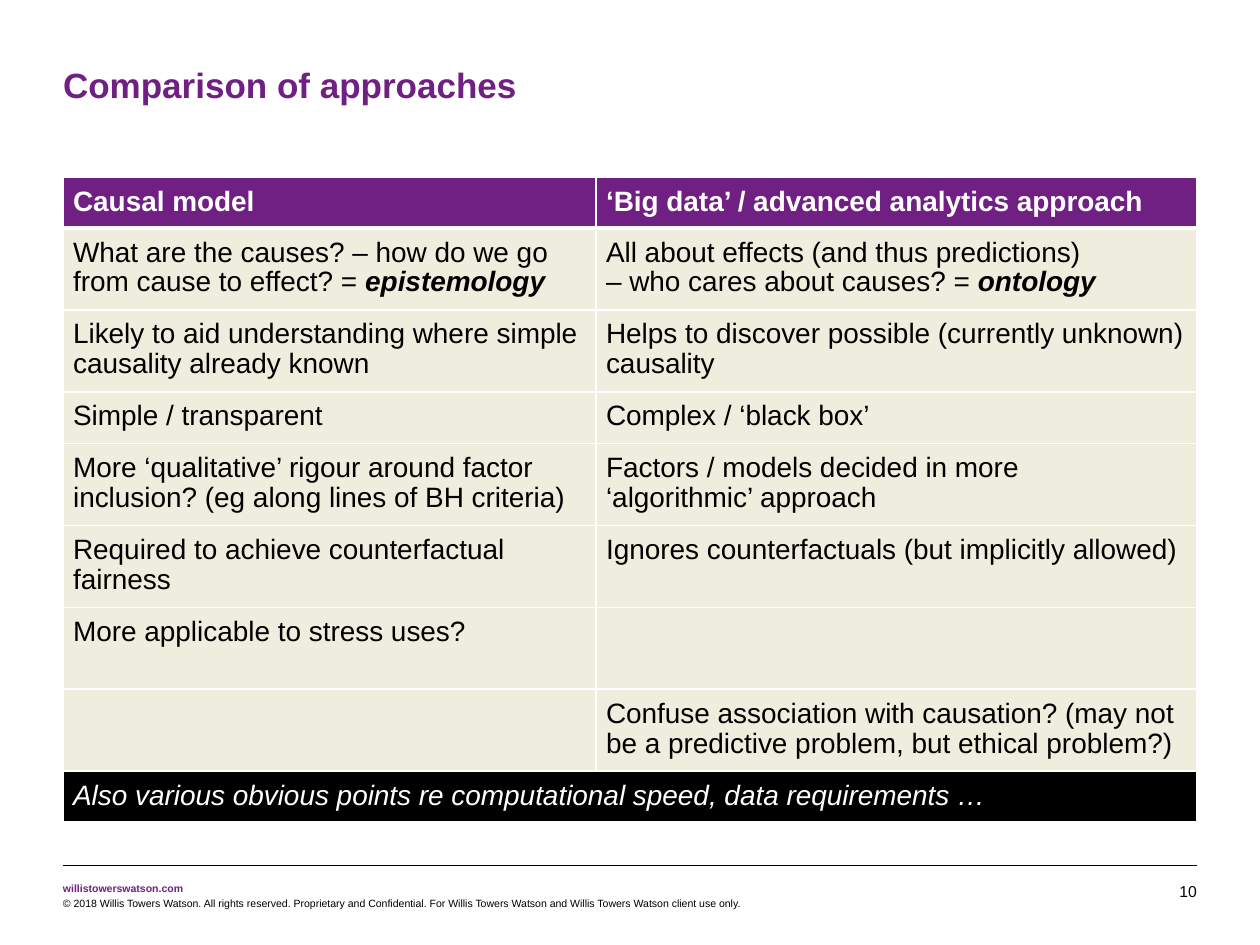
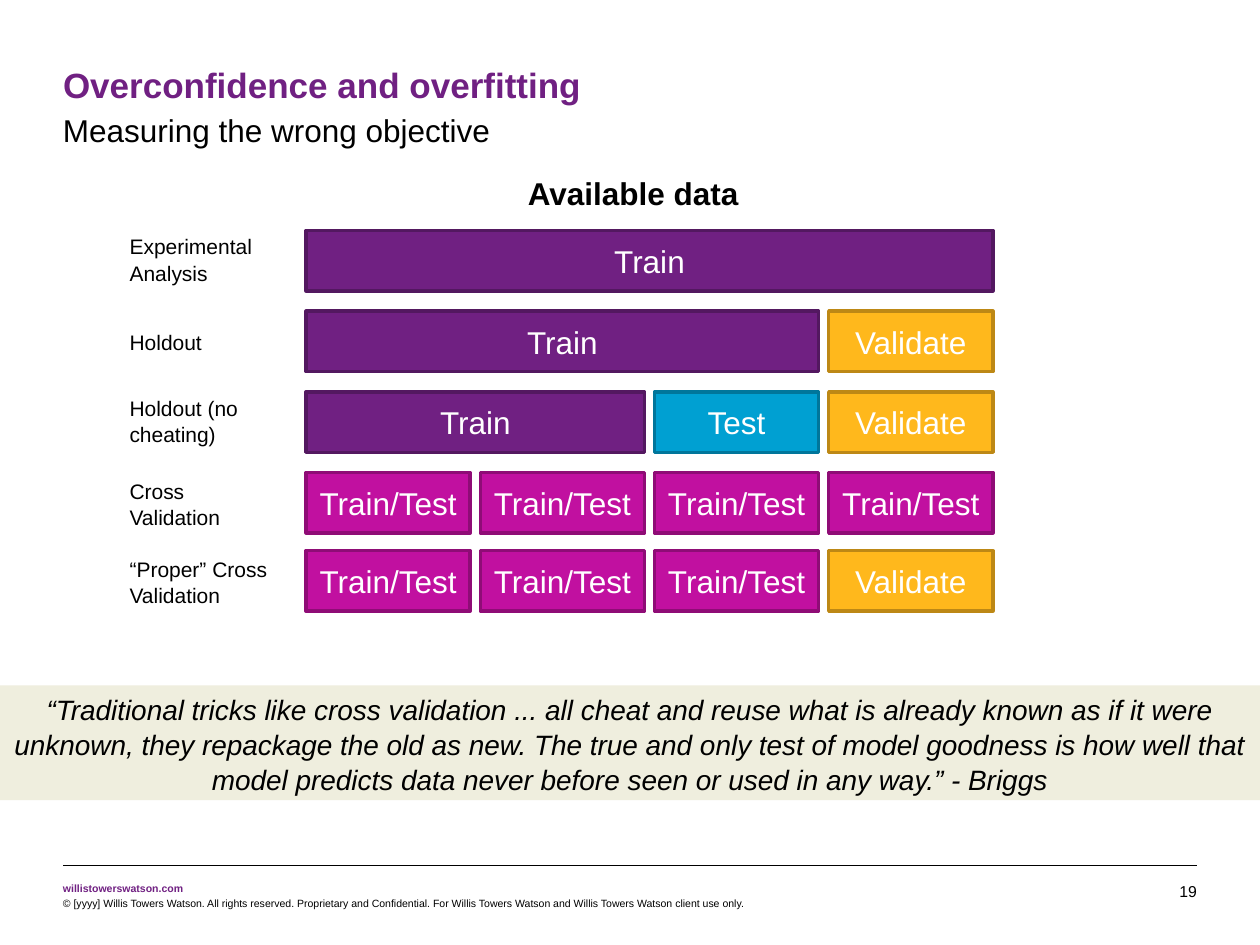
from dataclasses import dataclass

from lxml import etree
from pptx import Presentation
from pptx.dml.color import RGBColor
from pptx.enum.shapes import MSO_CONNECTOR as Connector, MSO_SHAPE as Shape
from pptx.enum.text import MSO_ANCHOR as Anchor, MSO_AUTO_SIZE as AutoSize, PP_ALIGN as Align
from pptx.oxml.ns import qn
from pptx.util import Inches, Pt


@dataclass(frozen=True)
class Theme:
    font: str = "Arial"
    purple: str = "702082"
    cream: str = "EFEEDE"
    black: str = "000000"
    white: str = "FFFFFF"
    title: int = 20
    heading: int = 18
    body: int = 16
    label: int = 12
    page_number: int = 9
    footer: int = 6
    table_spacing: float = 0.96
    text_spacing: float = 1.04


THEME = Theme()
MARGIN, CONTENT_WIDTH = 0.5, 9
WEBSITE = "willistowerswatson.com"
COPYRIGHT = (
    "© {year} Willis Towers Watson. All rights reserved. Proprietary and Confidential. "
    "For Willis Towers Watson and Willis Towers Watson client use only."
)

# Text between asterisks is bold italic.
APPROACHES = [
    ("Causal model", "‘Big data’ / advanced analytics approach"),
    ("What are the causes? – how do we go from cause to effect? = *epistemology*",
     "All about effects (and thus predictions)\n– who cares about causes? = *ontology*"),
    ("Likely to aid understanding where simple causality already known",
     "Helps to discover possible (currently unknown) causality"),
    ("Simple / transparent", "Complex / ‘black box’"),
    ("More ‘qualitative’ rigour around factor inclusion? (eg along lines of BH criteria)",
     "Factors / models decided in more\n‘algorithmic’ approach"),
    ("Required to achieve counterfactual fairness",
     "Ignores counterfactuals (but implicitly allowed)"),
    ("More applicable to stress uses?", ""),
    ("", "Confuse association with causation? (may not be a predictive problem, "
         "but ethical problem?)"),
    ("Also various obvious points re computational speed, data requirements …", ""),
]
COLUMN_WIDTHS = (4.23, 4.77)
ROW_HEIGHTS = (0.4, 0.65, 0.65, 0.41, 0.65, 0.65, 0.65, 0.65, 0.4)

# Segment name: fill, outline
SEGMENT_COLOURS = {
    "Train": (THEME.purple, "531860"),
    "Test": ("00A0D2", "00769B"),
    "Validate": ("FFB81C", "BD8815"),
    "Train/Test": ("C110A0", "8F0C76"),
}
# Label, label top, label width, bar top, segments with the grid columns they span
DATA_SPLITS = [
    ("Experimental Analysis", 1.8, 1.78, 1.83, [("Train", 4)]),
    ("Holdout", 2.56, 1.78, 2.47, [("Train", 3), ("Validate", 1)]),
    ("Holdout (no cheating)", 3.08, 1.17, 3.11, [("Train", 2), ("Test", 1), ("Validate", 1)]),
    ("Cross Validation", 3.74, 1.17, 3.75, [("Train/Test", 1)] * 4),
    ("“Proper” Cross Validation", 4.36, 1.51, 4.37, [("Train/Test", 1)] * 3 + [("Validate", 1)]),
]
GRID_LEFT, GRID_WIDTH, GRID_GAP, GRID_COLUMNS, BAR_HEIGHT = 2.43, 5.45, 0.08, 4, 0.48
QUOTE = (
    "“Traditional tricks like cross validation ... all cheat and reuse what is already known "
    "as if it were unknown, they repackage the old as new. The true and only test of model "
    "goodness is how well that model predicts data never before seen or used in any way.” - Briggs"
)


def colour(value):
    return RGBColor.from_string(value)


def write(frame, text, size=THEME.body, color=THEME.black, bold=False, italic=False,
          align=Align.LEFT, spacing=None):
    """Fill the first paragraph; newlines break lines, asterisks mark bold italic."""
    para = frame.paragraphs[0]
    para.alignment = align
    para.line_spacing = spacing
    para.font.size = Pt(size)
    for index, piece in enumerate(text.split("*")):
        emphasis = index % 2 == 1
        for line_number, line in enumerate(piece.split("\n")):
            if line_number:
                para.add_line_break()
            if not line:
                continue
            span = para.add_run()
            span.text = line
            span.font.name = THEME.font
            span.font.size = Pt(size)
            span.font.bold = bold or emphasis
            span.font.italic = italic or emphasis
            span.font.color.rgb = colour(color)


def set_frame(frame, inset=None, anchor=Anchor.TOP, wrap=True):
    frame.word_wrap = wrap
    frame.auto_size = AutoSize.NONE
    frame.vertical_anchor = anchor
    if inset is not None:
        frame.margin_left = frame.margin_right = Inches(inset)
        frame.margin_top = frame.margin_bottom = Inches(inset)


def add_text(page, text, place, inset=None, anchor=Anchor.TOP, wrap=True, **style):
    box = page.shapes.add_textbox(*map(Inches, place))
    set_frame(box.text_frame, inset, anchor, wrap)
    write(box.text_frame, text, **style)


def add_block(page, text, place, fill, outline=None, anchor=Anchor.MIDDLE, **style):
    block = page.shapes.add_shape(Shape.RECTANGLE, *map(Inches, place))
    block.shadow.inherit = False
    block.fill.solid()
    block.fill.fore_color.rgb = colour(fill)
    if outline:
        block.line.color.rgb = colour(outline)
        block.line.width = Pt(2)
    else:
        block.line.fill.background()
    set_frame(block.text_frame, anchor=anchor)
    write(block.text_frame, text, align=Align.CENTER, **style)


def add_page(deck, title, number, year):
    """Add a slide with the shared title style, footer rule and footer texts."""
    page = deck.slides.add_slide(deck.slide_layouts.get_by_name("Title Only"))
    heading = page.shapes.title
    heading.left, heading.top = Inches(MARGIN), Inches(0.5)
    heading.width, heading.height = Inches(CONTENT_WIDTH), Inches(0.34)
    set_frame(heading.text_frame, inset=0)
    write(heading.text_frame, title, size=THEME.title, color=THEME.purple, bold=True)

    rule = page.shapes.add_connector(
        Connector.STRAIGHT, Inches(MARGIN), Inches(6.87),
        Inches(MARGIN + CONTENT_WIDTH), Inches(6.87))
    rule.line.color.rgb = colour(THEME.black)
    rule.line.width = Pt(0.25)
    etree.SubElement(rule.element.spPr, qn("a:effectLst"))

    add_text(page, WEBSITE, (MARGIN, 7, 0.96, 0.1), inset=0, wrap=False,
             size=THEME.footer, color=THEME.purple, bold=True)
    add_text(page, COPYRIGHT.format(year=year), (MARGIN, 7.12, 5.77, 0.1), inset=0,
             size=THEME.footer)
    add_text(page, str(number), (9.08, 7, 0.42, 0.15), inset=0, anchor=Anchor.BOTTOM,
             size=THEME.page_number, align=Align.RIGHT)
    return page


def set_borders(cell, bottom_width):
    properties = cell._tc.get_or_add_tcPr()
    widths = {"a:lnL": 1, "a:lnR": 1, "a:lnT": 1, "a:lnB": bottom_width}
    for position, (tag, width) in enumerate(widths.items()):
        border = etree.Element(qn(tag), w=str(Pt(width)))
        fill = etree.SubElement(border, qn("a:solidFill"))
        etree.SubElement(fill, qn("a:srgbClr"), val=THEME.white)
        properties.insert(position, border)


def add_approach_table(page):
    table = page.shapes.add_table(
        len(APPROACHES), len(COLUMN_WIDTHS), Inches(MARGIN), Inches(1.41),
        Inches(sum(COLUMN_WIDTHS)), Inches(sum(ROW_HEIGHTS))).table
    table.horz_banding = False
    for column, width in zip(table.columns, COLUMN_WIDTHS):
        column.width = Inches(width)
    for row, height in zip(table.rows, ROW_HEIGHTS):
        row.height = Inches(height)

    last = len(APPROACHES) - 1
    row_styles = {
        0: (THEME.purple, {"color": THEME.white, "bold": True}),
        last: (THEME.black, {"color": THEME.white, "italic": True}),
    }
    for row_index, texts in enumerate(APPROACHES):
        fill, style = row_styles.get(row_index, (THEME.cream, {}))
        for column_index, text in enumerate(texts):
            cell = table.cell(row_index, column_index)
            cell.fill.solid()
            cell.fill.fore_color.rgb = colour(fill)
            cell.margin_left = cell.margin_right = Inches(0.08)
            cell.margin_top = cell.margin_bottom = Inches(0.08)
            set_borders(cell, bottom_width=1 if row_index else 3)
            write(cell.text_frame, text, spacing=THEME.table_spacing, **style)
    table.cell(last, 0).merge(table.cell(last, 1))


def add_data_splits(page):
    pitch = (GRID_WIDTH + GRID_GAP) / GRID_COLUMNS
    for label, label_top, label_width, top, segments in DATA_SPLITS:
        add_text(page, label, (0.93, label_top, label_width, 0.5),
                 size=THEME.label, spacing=THEME.text_spacing)
        column = 0
        for name, columns in segments:
            place = (GRID_LEFT + column * pitch, top, columns * pitch - GRID_GAP, BAR_HEIGHT)
            fill, outline = SEGMENT_COLOURS[name]
            add_block(page, name, place, fill, outline, size=THEME.heading, color=THEME.white)
            column += columns


def main():
    deck = Presentation()
    deck.slide_width, deck.slide_height = Inches(10), Inches(7.5)

    comparison = add_page(deck, "Comparison of approaches", number=10, year="2018")
    add_approach_table(comparison)

    overfitting = add_page(deck, "Overconfidence and overfitting", number=19, year="[yyyy]")
    add_text(overfitting, "Measuring the wrong objective", (MARGIN, 0.88, CONTENT_WIDTH, 0.3),
             inset=0, size=THEME.heading)
    add_text(overfitting, "Available data", (4.09, 1.33, 1.89, 0.4), wrap=False,
             size=THEME.heading, bold=True)
    add_data_splits(overfitting)
    add_block(overfitting, QUOTE, (0, 5.44, 10, 0.91), THEME.cream, anchor=Anchor.TOP,
              italic=True, spacing=THEME.text_spacing)

    deck.save("out.pptx")


if __name__ == "__main__":
    main()
